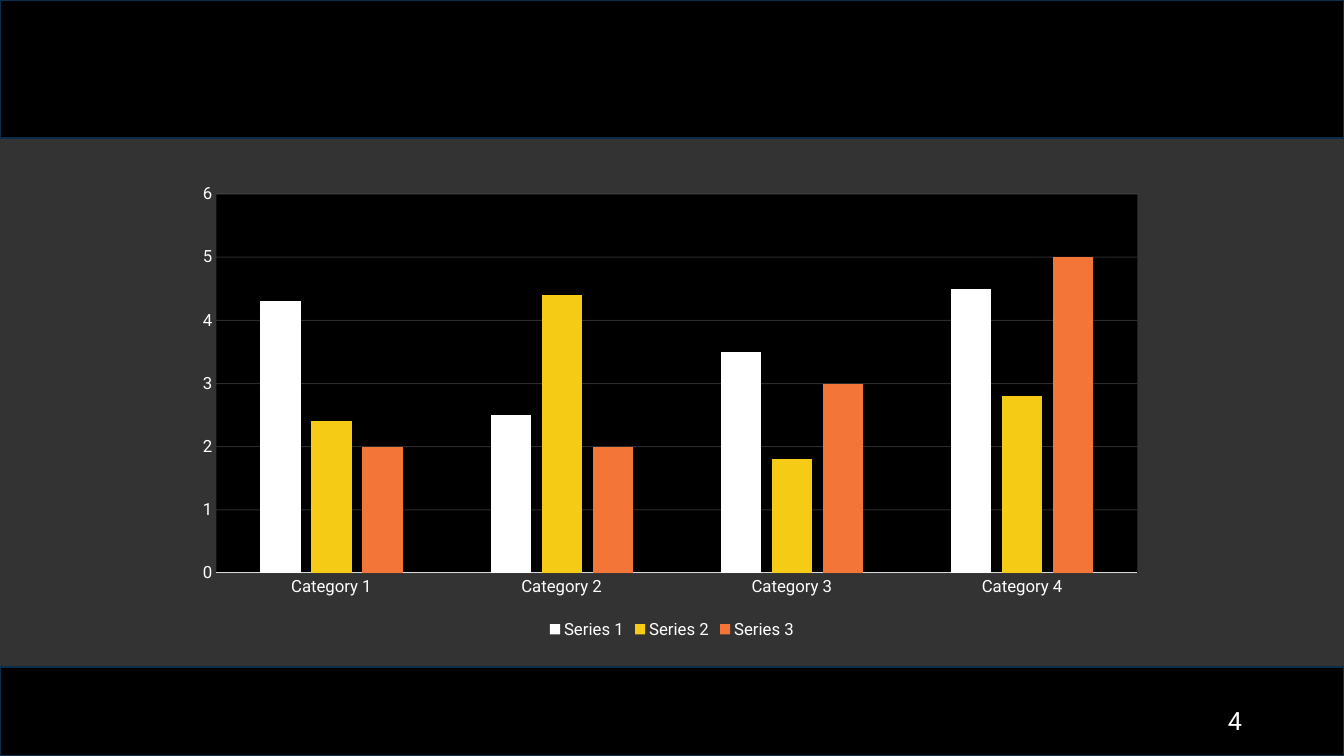
"""Build a dark slide with a clustered column chart between two black bands."""
from lxml.etree import SubElement
from pptx import Presentation
from pptx.chart.data import CategoryChartData
from pptx.dml.color import RGBColor
from pptx.enum.chart import XL_CHART_TYPE, XL_LEGEND_POSITION, XL_TICK_MARK
from pptx.enum.shapes import MSO_SHAPE
from pptx.enum.text import MSO_ANCHOR, PP_ALIGN
from pptx.oxml import parse_xml
from pptx.oxml.ns import nsdecls, qn
from pptx.util import Cm, Pt

CATEGORIES = ["Category 1", "Category 2", "Category 3", "Category 4"]
SERIES = [
    ("Series 1", (4.3, 2.5, 3.5, 4.5), "white"),
    ("Series 2", (2.4, 4.4, 1.8, 2.8), "yellow"),
    ("Series 3", (2, 2, 3, 5), "orange"),
]
PAGE_NUMBER = "4"
FONT = "Roboto"
COLORS = {
    "background": "333333", "black": "000000", "white": "FFFFFF", "navy": "092D4B",
    "axis": "D9D9D9", "yellow": "F6CB16", "orange": "F37638",
}
WIDTH, HEIGHT = 33.87, 19.05
TOP_BAND, BOTTOM_BAND = 3.48, 2.24
BANDS = [(0, TOP_BAND), (HEIGHT - BOTTOM_BAND, BOTTOM_BAND)]
CHART_BOX = (4.72, 4.42, 24.43, 11.79)
NUMBER_BOX = (23.93, 17.65, 7.62, 1.02)
PLOT_LAYOUT = {"x": 0.03, "y": 0.04, "w": 0.95, "h": 0.81}


def rgb(name):
    return RGBColor.from_string(COLORS[name])


def paint(fill, name):
    fill.solid()
    fill.fore_color.rgb = rgb(name)


def set_font(font, size, color="white"):
    font.name = FONT
    font.size = Pt(size)
    font.color.rgb = rgb(color)


def add_band(s, top, height):
    sp = s.shapes.add_shape(MSO_SHAPE.RECTANGLE, 0, Cm(top), Cm(WIDTH), Cm(height))
    sp.shadow.inherit = False
    paint(sp.fill, "black")
    sp.line.color.rgb = rgb("navy")
    sp.line.width = Pt(1.5)


def add_page_number(s):
    tf = s.shapes.add_textbox(*map(Cm, NUMBER_BOX)).text_frame
    tf.word_wrap = True
    tf.vertical_anchor = MSO_ANCHOR.MIDDLE
    tf.text = PAGE_NUMBER
    p = tf.paragraphs[0]
    p.alignment = PP_ALIGN.RIGHT
    set_font(p.runs[0].font, 18)


def style_plot_area(chart):
    area = chart.element.find(".//" + qn("c:plotArea"))
    for old in area.findall(qn("c:layout")):
        area.remove(old)
    layout = parse_xml(f"<c:layout {nsdecls('c')}/>")
    manual = SubElement(layout, qn("c:manualLayout"))
    modes = {"layoutTarget": "inner", "xMode": "edge", "yMode": "edge"}
    for tag, val in {**modes, **PLOT_LAYOUT}.items():
        SubElement(manual, qn("c:" + tag)).set("val", str(val))
    area.insert(0, layout)
    area.append(parse_xml(
        f'<c:spPr {nsdecls("c", "a")}><a:solidFill>'
        f'<a:srgbClr val="{COLORS["black"]}"/></a:solidFill></c:spPr>'))
    tint = area.find(f".//{qn('c:majorGridlines')}//{qn('a:srgbClr')}")
    SubElement(tint, qn("a:alpha")).set("val", "17000")


def add_column_chart(s):
    data = CategoryChartData()
    data.categories = CATEGORIES
    for name, values, _ in SERIES:
        data.add_series(name, values)
    chart = s.shapes.add_chart(
        XL_CHART_TYPE.COLUMN_CLUSTERED, *map(Cm, CHART_BOX), data).chart
    chart.has_title = False
    set_font(chart.font, 10, "black")
    chart.has_legend = True
    chart.legend.position = XL_LEGEND_POSITION.BOTTOM
    chart.legend.include_in_layout = False
    set_font(chart.legend.font, 12)

    plot = chart.plots[0]
    plot.gap_width, plot.overlap = 219, -27
    plot.vary_by_categories = False
    for series, (_, _, color) in zip(plot.series, SERIES):
        paint(series.format.fill, color)
        series.invert_if_negative = False

    for axis in (chart.category_axis, chart.value_axis):
        axis.major_tick_mark = axis.minor_tick_mark = XL_TICK_MARK.NONE
        set_font(axis.tick_labels.font, 12)
    chart.category_axis.format.line.color.rgb = rgb("axis")
    chart.category_axis.format.line.width = Pt(0.75)

    axis = chart.value_axis
    axis.minimum_scale, axis.maximum_scale, axis.major_unit = 0, 6, 1
    axis.format.line.fill.background()
    grid = axis.major_gridlines.format.line
    grid.color.rgb = rgb("white")
    grid.width = Pt(0.75)
    style_plot_area(chart)


def main():
    prs = Presentation()
    prs.slide_width, prs.slide_height = Cm(WIDTH), Cm(HEIGHT)
    s = prs.slides.add_slide(prs.slide_layouts[6])
    paint(s.background.fill, "background")
    for top, height in BANDS:
        add_band(s, top, height)
    add_page_number(s)
    add_column_chart(s)
    prs.save("out.pptx")


if __name__ == "__main__":
    main()
